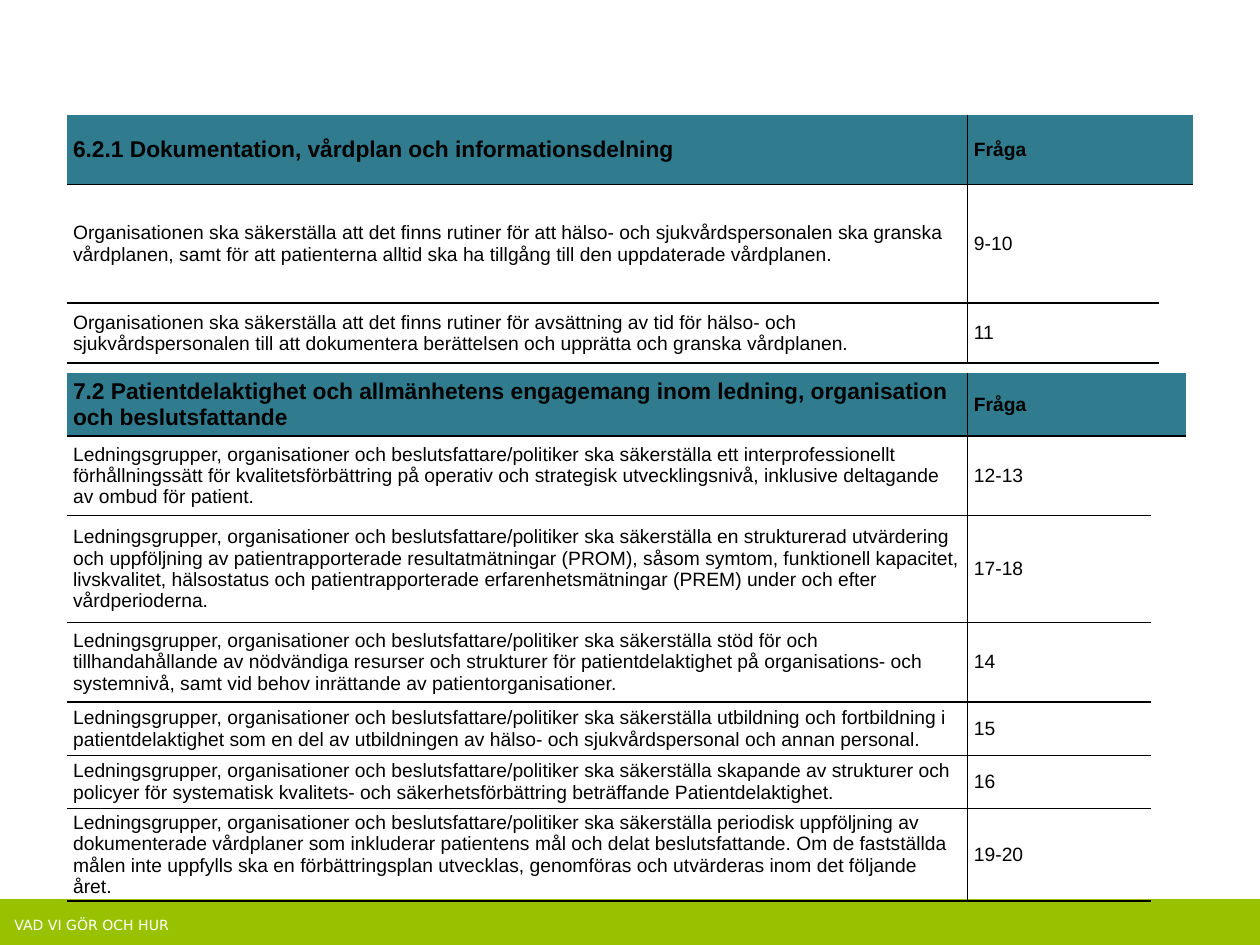
from dataclasses import dataclass

from lxml import etree
from pptx import Presentation
from pptx.dml.color import RGBColor
from pptx.enum import shapes, text
from pptx.oxml import ns
from pptx.util import Pt


@dataclass(frozen=True)
class Theme:
    teal: str = "307C8E"
    green: str = "98C200"
    black: str = "000000"
    white: str = "FFFFFF"
    font: str = "Arial"
    footer_font: str = "DejaVu Sans"
    heading: float = 13
    body: float = 11
    footer: float = 8
    rule: float = 1


THEME = Theme()
FOOTER = "VAD VI GÖR OCH HUR"
LEADERS = "Ledningsgrupper, organisationer och beslutsfattare/politiker ska säkerställa "
ORGANISATION = "Organisationen ska säkerställa att det finns rutiner för "
LEFT = 38.16

TABLES = [
    {
        "top": 65.6,
        "columns": [514.8, 109.4, 19.4],
        "heights": [39.9, 67.7, 34.4],
        "rows": [
            ("6.2.1 Dokumentation, vårdplan och informationsdelning", "Fråga"),
            (ORGANISATION + "att hälso- och sjukvårdspersonalen ska granska vårdplanen, samt för att patienterna alltid ska ha tillgång till den uppdaterade vårdplanen.", "9-10"),
            (ORGANISATION + "avsättning av tid för hälso- och sjukvårdspersonalen till att dokumentera berättelsen och upprätta och granska vårdplanen.", "11"),
        ],
    },
    {
        "top": 213.1,
        "columns": [514.8, 105, 20],
        "heights": [36, 45.6, 61, 45.6, 30.4, 30.4, 45.6],
        "rows": [
            ("7.2 Patientdelaktighet och allmänhetens engagemang inom ledning, organisation och beslutsfattande", "Fråga"),
            (LEADERS + "ett interprofessionellt förhållningssätt för kvalitetsförbättring på operativ och strategisk utvecklingsnivå, inklusive deltagande av ombud för patient.", "12-13"),
            (LEADERS + "en strukturerad utvärdering och uppföljning av patientrapporterade resultatmätningar (PROM), såsom symtom, funktionell kapacitet, livskvalitet, hälsostatus och patientrapporterade erfarenhetsmätningar (PREM) under och efter vårdperioderna.", "17-18"),
            (LEADERS + "stöd för och tillhandahållande av nödvändiga resurser och strukturer för patientdelaktighet på organisations- och systemnivå, samt vid behov inrättande av patientorganisationer.", "14"),
            (LEADERS + "utbildning och fortbildning i patientdelaktighet som en del av utbildningen av hälso- och sjukvårdspersonal och annan personal.", "15"),
            (LEADERS + "skapande av strukturer och policyer för systematisk kvalitets- och säkerhetsförbättring beträffande Patientdelaktighet.", "16"),
            (LEADERS + "periodisk uppföljning av dokumenterade vårdplaner som inkluderar patientens mål och delat beslutsfattande. Om de fastställda målen inte uppfylls ska en förbättringsplan utvecklas, genomföras och utvärderas inom det följande året.", "19-20"),
        ],
    },
]


def color(value):
    return RGBColor.from_string(value)


def style_font(font, name, size, value, bold=False):
    font.name = name
    font.size = Pt(size)
    font.bold = bold
    font.color.rgb = color(value)


def set_borders(cell, visible):
    properties = cell._tc.get_or_add_tcPr()
    for index, side in enumerate("LRTB"):
        line = etree.Element(ns.qn(f"a:ln{side}"), w=str(Pt(THEME.rule)))
        if side in visible:
            fill = etree.SubElement(line, ns.qn("a:solidFill"))
            etree.SubElement(fill, ns.qn("a:srgbClr"), val=THEME.black)
        else:
            etree.SubElement(line, ns.qn("a:noFill"))
        properties.insert(index, line)


def write_cell(cell, content, size, bold, spacing):
    cell.vertical_anchor = text.MSO_ANCHOR.MIDDLE
    cell.margin_left = cell.margin_right = Pt(3.6)
    cell.margin_top = cell.margin_bottom = 0
    cell.text_frame.text = content
    paragraph = cell.text_frame.paragraphs[0]
    paragraph.space_before = paragraph.space_after = Pt(spacing)
    style_font(paragraph.font, THEME.font, size, THEME.black, bold)
    for run in paragraph.runs:
        style_font(run.font, THEME.font, size, THEME.black, bold)


def border_sides(row_index):
    if row_index == 0:
        return "RB", "LB", "B"
    return "RTB", "LTB", "T" if row_index == 1 else ""


def add_question_table(slide, top, columns, heights, rows):
    table = slide.shapes.add_table(
        len(rows), len(columns), Pt(LEFT), Pt(top), Pt(sum(columns)), Pt(sum(heights))
    ).table
    table.first_row = table.horz_banding = False
    for column, width in zip(table.columns, columns):
        column.width = Pt(width)
    for row, height in zip(table.rows, heights):
        row.height = Pt(height)
    table.cell(0, 1).merge(table.cell(0, 2))
    for row_index, contents in enumerate(rows):
        header = row_index == 0
        sides = border_sides(row_index)
        for column_index, content in enumerate((*contents, "")):
            cell = table.cell(row_index, column_index)
            size = THEME.heading if header and column_index == 0 else THEME.body
            write_cell(cell, content, size, header, 0 if header else 2)
            if header:
                cell.fill.solid()
                cell.fill.fore_color.rgb = color(THEME.teal)
            else:
                cell.fill.background()
            set_borders(cell, sides[column_index])


def add_footer(slide):
    band = slide.shapes.add_shape(
        shapes.MSO_SHAPE.RECTANGLE, 0, Pt(513.8), Pt(720), Pt(26.5)
    )
    band.shadow.inherit = False
    band.fill.solid()
    band.fill.fore_color.rgb = color(THEME.green)
    band.line.fill.background()
    label = slide.shapes.add_textbox(Pt(1.2), Pt(519.1), Pt(110.9), Pt(18))
    frame = label.text_frame
    frame.word_wrap = True
    frame.auto_size = text.MSO_AUTO_SIZE.SHAPE_TO_FIT_TEXT
    frame.text = FOOTER
    paragraph = frame.paragraphs[0]
    paragraph.line_spacing = 1.1
    style_font(paragraph.runs[0].font, THEME.footer_font, THEME.footer, THEME.white)


def main():
    presentation = Presentation()
    presentation.slide_width = Pt(720)
    presentation.slide_height = Pt(540)
    slide = presentation.slides.add_slide(presentation.slide_layouts[6])
    add_footer(slide)
    for table in TABLES:
        add_question_table(slide, **table)
    presentation.save("out.pptx")


if __name__ == "__main__":
    main()
